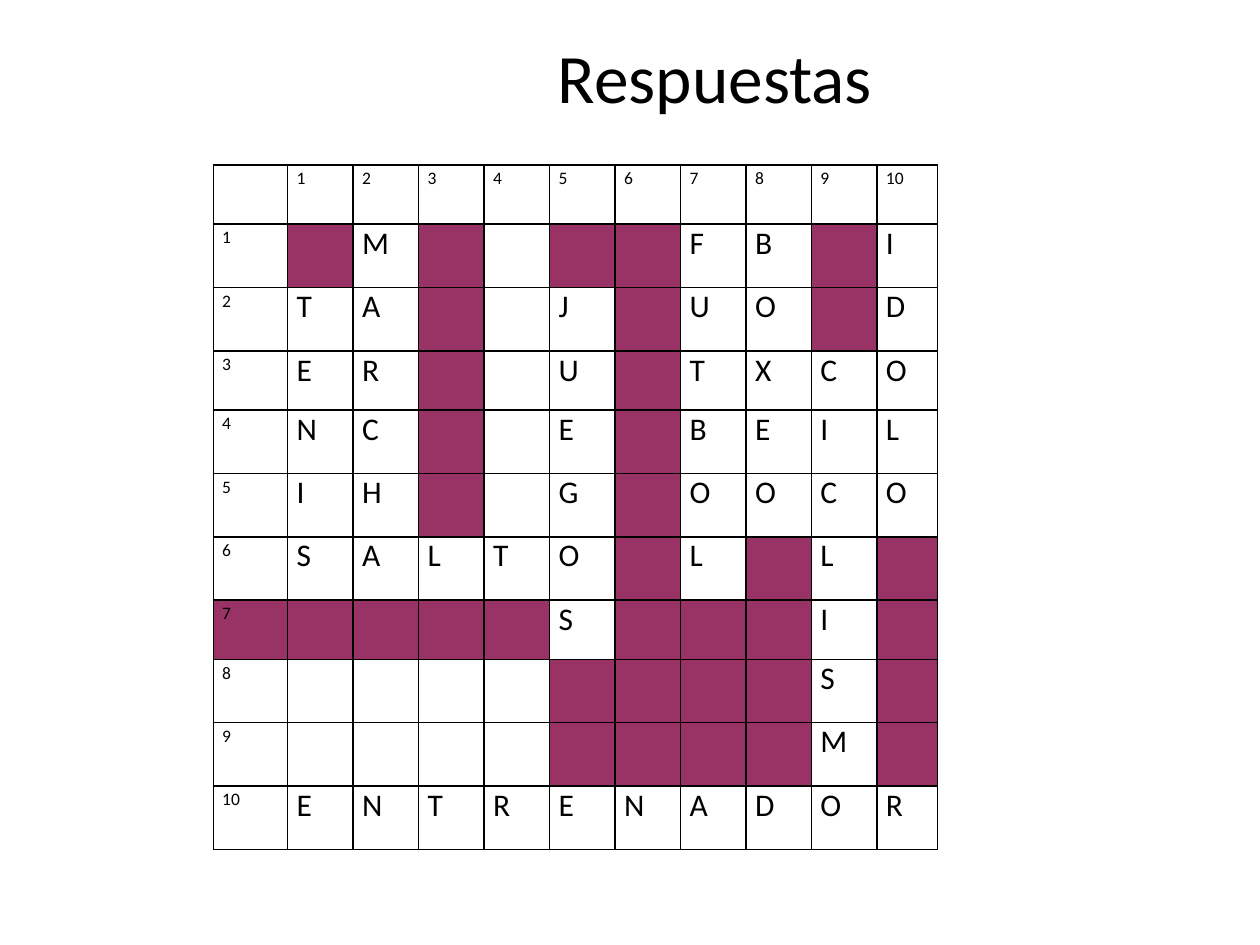
from dataclasses import dataclass

from lxml import etree
from pptx import Presentation
from pptx.dml.color import RGBColor
from pptx.enum.text import MSO_ANCHOR, PP_ALIGN
from pptx.oxml.ns import qn
from pptx.util import Cm, Pt

MIDDLE = MSO_ANCHOR.MIDDLE
CENTER = PP_ALIGN.CENTER


@dataclass(frozen=True)
class Theme:
    font: str = "Calibri"
    ink: str = "000000"
    paper: str = "FFFFFF"
    block: str = "993366"
    title: float = 39.6
    letter: int = 18
    number: int = 10
    rule: int = 1


THEME = Theme()

# Crossword rows: "#" is a block, "." is an open square
GRID = [
    "#M#.##FB#I",
    "TA#.J#UO#D",
    "ER#.U#TXCO",
    "NC#.E#BEIL",
    "IH#.G#OOCO",
    "SALTO#L#L#",
    "####S###I#",
    "....####S#",
    "....####M#",
    "ENTRENADOR",
]
SIZE = len(GRID)
FULL_ROW = 7  # the row whose number is shaded too
LOW_ROWS = (0, 3, 7)


def style(para, size):
    font = para.font
    font.name = THEME.font
    font.size = Pt(size)
    font.color.rgb = RGBColor.from_string(THEME.ink)


def add_title(slide, text, left, top, width, height):
    frame = slide.shapes.add_textbox(left, top, width, height).text_frame
    frame.word_wrap = True
    frame.vertical_anchor = MIDDLE
    para = frame.paragraphs[0]
    para.text = text
    para.alignment = CENTER
    style(para, THEME.title)


def add_edges(cell):
    props = cell._tc.get_or_add_tcPr()
    for i, side in enumerate(("lnL", "lnR", "lnT", "lnB")):
        line = etree.Element(qn("a:" + side), w=str(Pt(THEME.rule)))
        fill = etree.SubElement(line, qn("a:solidFill"))
        etree.SubElement(fill, qn("a:srgbClr"), val=THEME.ink)
        props.insert(i, line)


def fill_cell(cell, text, size, color, space=None):
    cell.margin_left = cell.margin_right = Cm(0.18)
    cell.margin_top = cell.margin_bottom = 0
    cell.fill.solid()
    cell.fill.fore_color.rgb = RGBColor.from_string(color)
    add_edges(cell)
    para = cell.text_frame.paragraphs[0]
    para.text = text
    para.line_spacing = space
    style(para, size)


def add_puzzle(slide, left, top, width, height):
    count = SIZE + 1
    table = slide.shapes.add_table(count, count, left, top, width, height).table
    table.first_row = table.horz_banding = False

    # Number column, equal letter columns, the rest for the last one
    head, step = Cm(1.5), Cm(1.32)
    for i, col in enumerate(table.columns):
        col.width = step if i else head
    table.columns[SIZE].width = width - head - step * (SIZE - 1)

    low = Cm(1.19)
    tall = (height - low * len(LOW_ROWS)) // (count - len(LOW_ROWS))
    for i, row in enumerate(table.rows):
        row.height = low if i in LOW_ROWS else tall

    # Numbers along the top and the left
    fill_cell(table.cell(0, 0), "", THEME.number, THEME.paper)
    for i in range(1, count):
        side = THEME.block if i == FULL_ROW else THEME.paper
        fill_cell(table.cell(0, i), str(i), THEME.number, THEME.paper, 1.15)
        fill_cell(table.cell(i, 0), str(i), THEME.number, side, 1.15)

    # Letters and blocks
    for r, word in enumerate(GRID, 1):
        for c, mark in enumerate(word, 1):
            color = THEME.block if mark == "#" else THEME.paper
            fill_cell(table.cell(r, c), mark.strip("#."), THEME.letter, color)


def main():
    deck = Presentation()
    deck.slide_width, deck.slide_height = Cm(25.4), Cm(19.05)
    slide = deck.slides.add_slide(deck.slide_layouts[6])
    add_title(slide, "Respuestas", Cm(4.7), Cm(0.76), Cm(19.43), Cm(1.55))
    add_puzzle(slide, Cm(4.3), Cm(3.33), Cm(14.6), Cm(13.8))
    deck.save("out.pptx")


if __name__ == "__main__":
    main()
